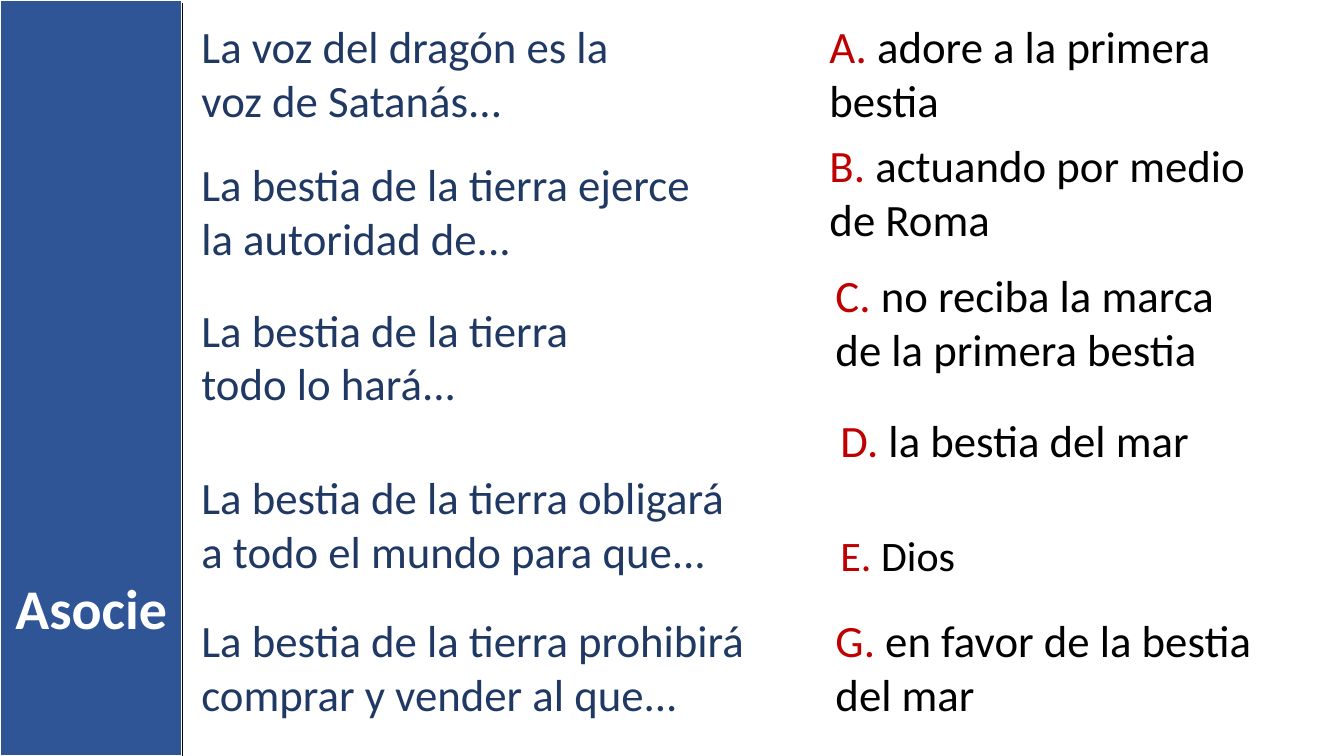
import pptx
import pptx.util
import pptx.dml.color
import pptx.enum.shapes
import pptx.enum.text
import lxml.etree
from dataclasses import dataclass

Pt = pptx.util.Pt


def rgb(value):
    return pptx.dml.color.RGBColor.from_string(value)


@dataclass(frozen=True)
class Theme:
    font = "Calibri"
    band = rgb("2F5597")
    statement = rgb("203864")
    letter = rgb("C00000")
    black = rgb("000000")
    white = rgb("FFFFFF")
    body_size = Pt(32)
    small_size = Pt(30)
    title_size = Pt(40)


theme = Theme()


def add_text(slide, left, top, width, height, size, runs):
    box = slide.shapes.add_textbox(Pt(left), Pt(top), Pt(width), Pt(height))
    box.text_frame.word_wrap = True
    box.text_frame.auto_size = pptx.enum.text.MSO_AUTO_SIZE.SHAPE_TO_FIT_TEXT
    paragraph = box.text_frame.paragraphs[0]
    paragraph.font.name = theme.font
    paragraph.font.size = size
    for text, color in runs:
        run = paragraph.add_run()
        run.text = text
        run.font.color.rgb = color
    return paragraph


presentation = pptx.Presentation()
presentation.slide_width = Pt(960)
presentation.slide_height = Pt(540)
slide = presentation.slides.add_slide(presentation.slide_layouts[6])

band_width = 130.3
band = slide.shapes.add_shape(
    pptx.enum.shapes.MSO_SHAPE.RECTANGLE, 0, 0, Pt(band_width), Pt(540))
band.shadow.inherit = False
band.fill.solid()
band.fill.fore_color.rgb = theme.band
band.line.color.rgb = theme.white
band.line.width = Pt(1.5)

statements = [
    (10, 325.5, "La voz del dragón es la voz de Satanás..."),
    (108.7, 368, "La bestia de la tierra ejerce la autoridad de..."),
    (212.4, 308, "La bestia de la tierra todo lo hará..."),
    (332, 391.7, "La bestia de la tierra obligará a todo el mundo para que..."),
    (434.2, 413.3, "La bestia de la tierra prohibirá comprar y vender al que..."),
]
for top, width, text in statements:
    add_text(slide, 136.8, top, width, 85, theme.body_size, [(text, theme.statement)])

answers = [
    (585.4, 10, 319, 85, theme.body_size, "A. ", "adore a la primera bestia"),
    (585.4, 95, 342, 85, theme.body_size, "B. ", "actuando por medio de Roma"),
    (589.7, 188, 311, 85, theme.body_size, "C. ", "no reciba la marca de la primera bestia"),
    (593.3, 291, 363, 46, theme.body_size, "D. ", "la bestia del mar"),
    (593.3, 374.4, 345.6, 44, theme.small_size, "E. ", "Dios"),
    (589.7, 434.2, 322.6, 85, theme.body_size, "G. ", "en favor de la bestia del mar"),
]
for left, top, width, height, size, letter, text in answers:
    add_text(slide, left, top, width, height, size,
             [(letter, theme.letter), (text, theme.black)])

title = add_text(slide, 0, 406, band_width, 55.4, theme.title_size,
                 [("Asocie", theme.white)])
title.alignment = pptx.enum.text.PP_ALIGN.CENTER
title.font.bold = True

divider = slide.shapes.add_connector(
    pptx.enum.shapes.MSO_CONNECTOR.STRAIGHT,
    Pt(band_width), Pt(2), Pt(band_width), Pt(540))
divider.line.color.rgb = theme.black
divider.line.width = Pt(1)
lxml.etree.SubElement(
    divider.element.spPr,
    "{http://schemas.openxmlformats.org/drawingml/2006/main}effectLst")

presentation.save("out.pptx")
